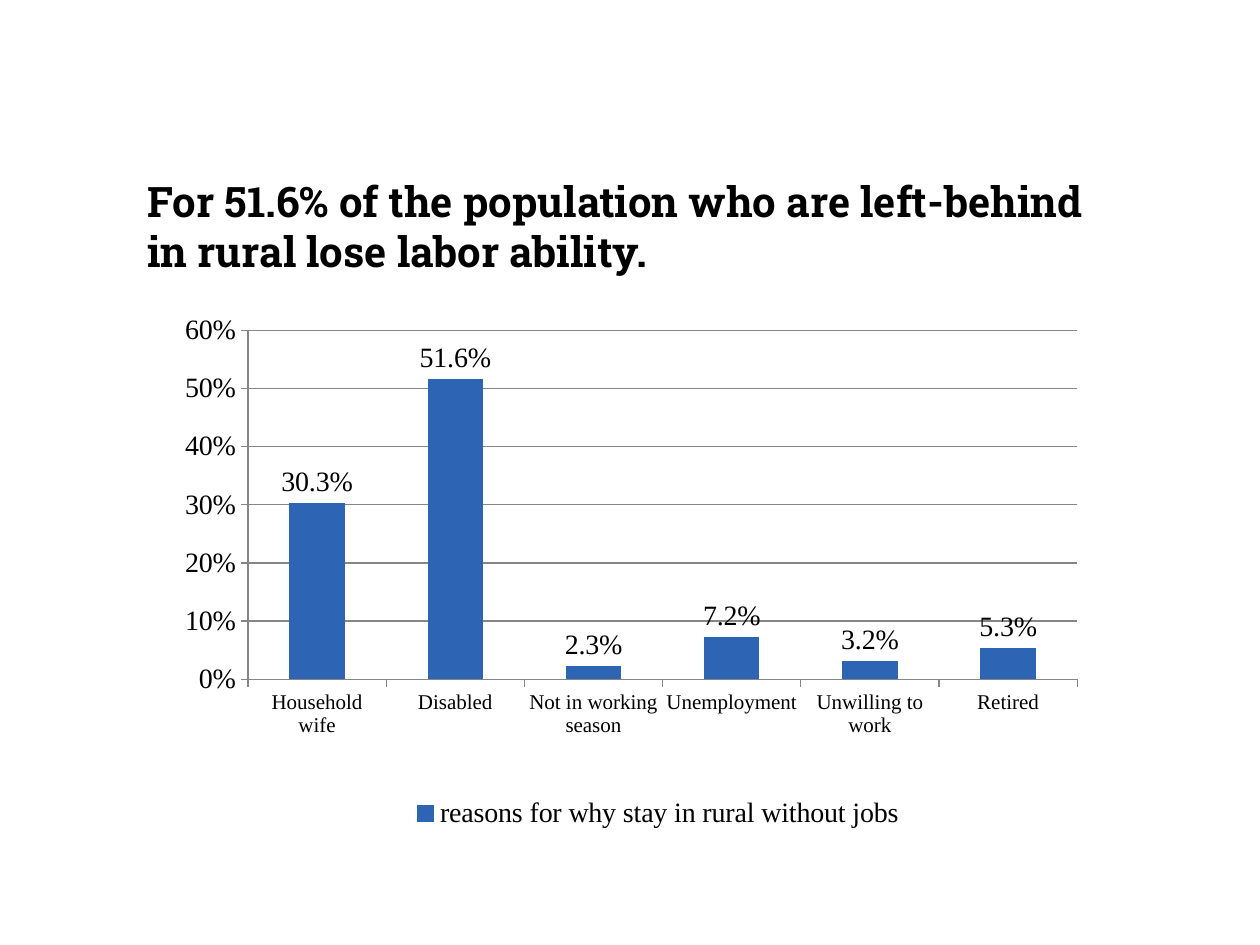
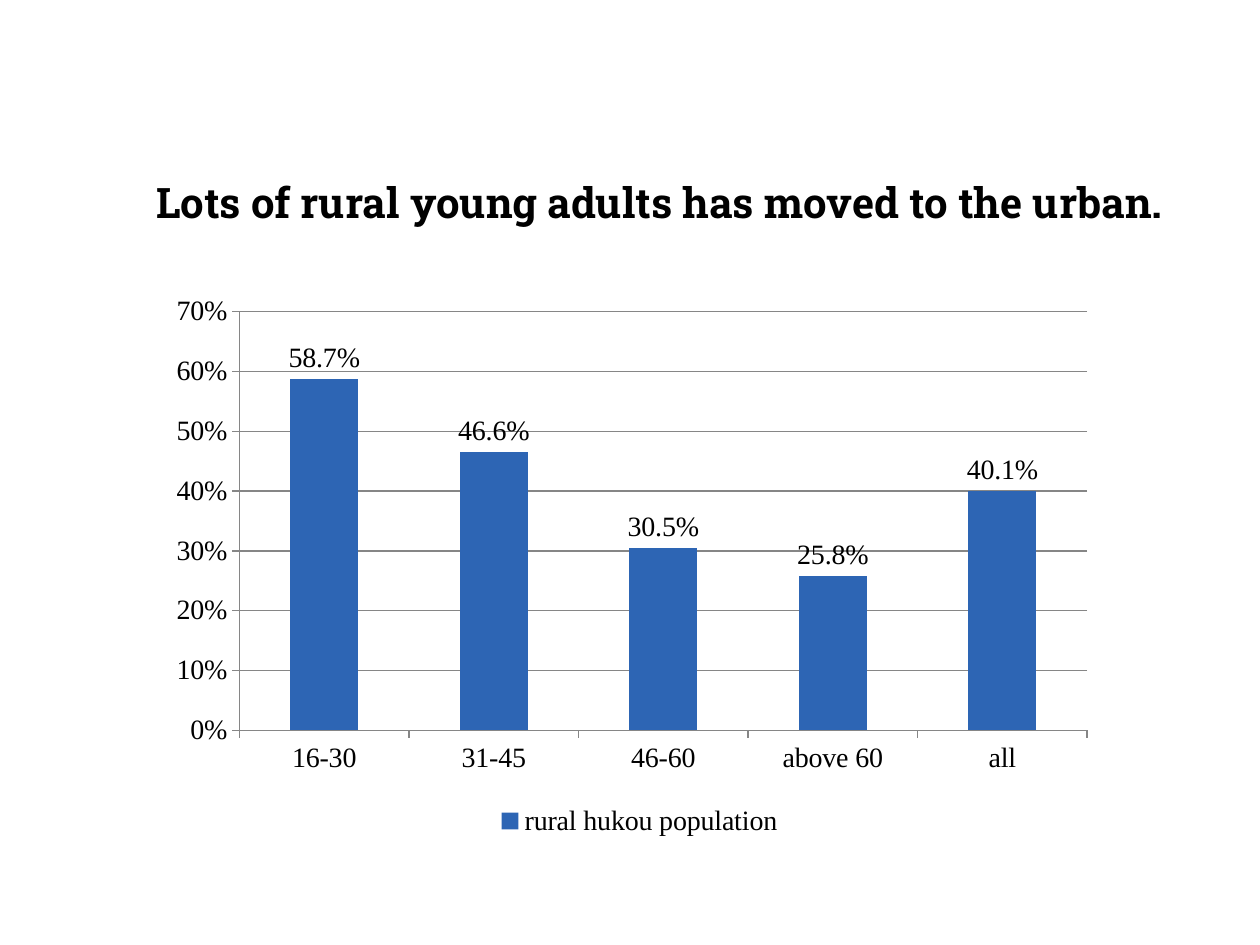
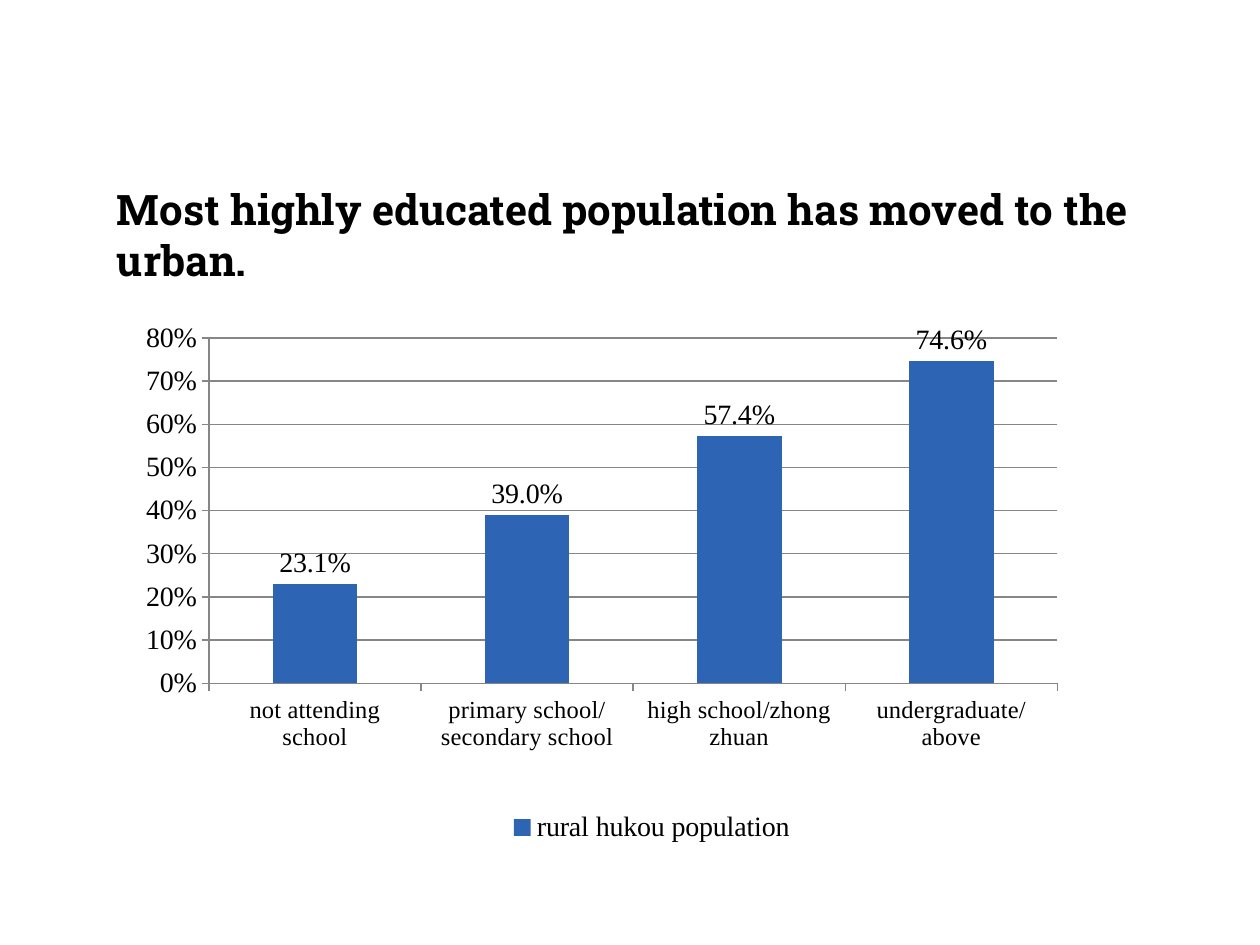
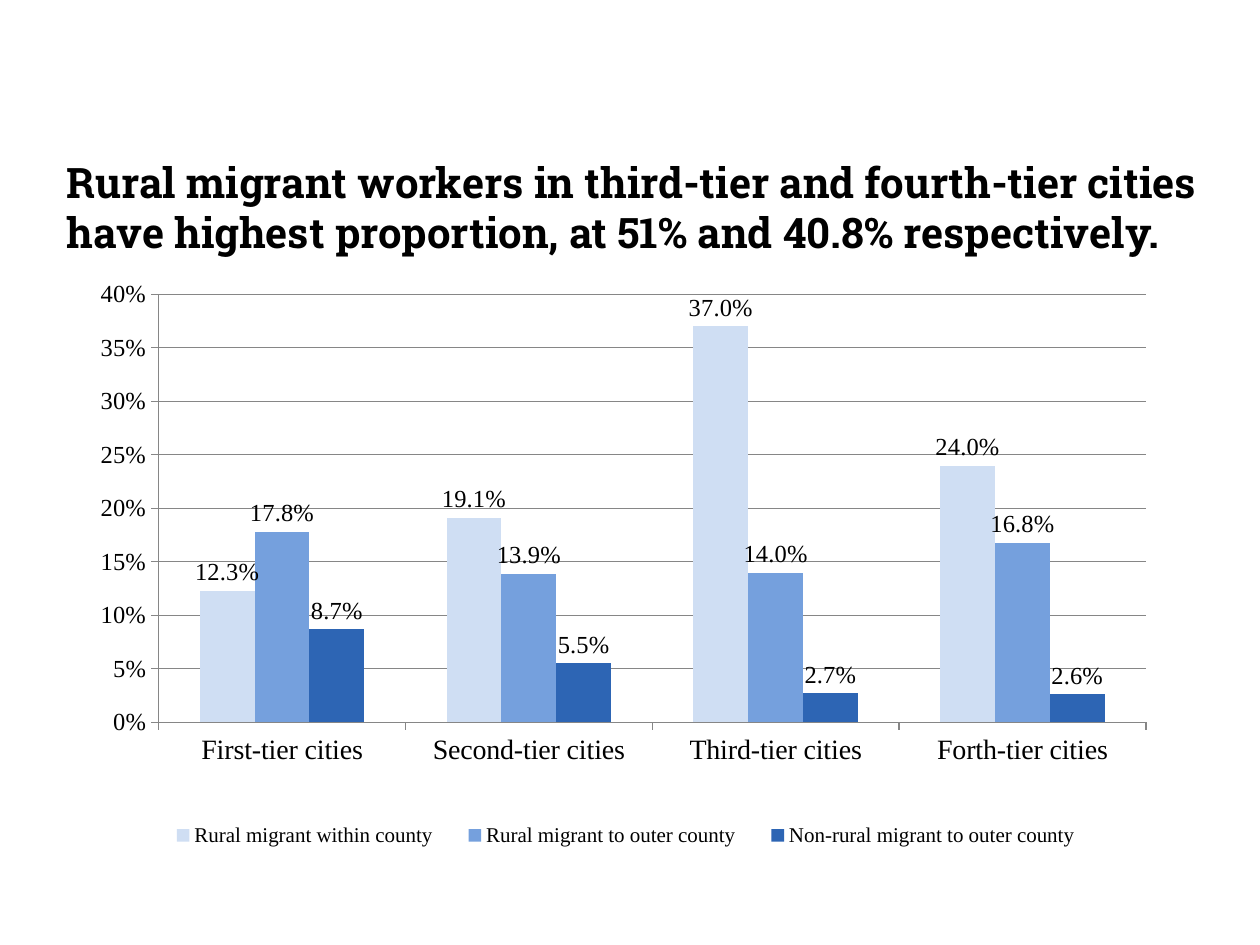
import dataclasses

import pptx
import pptx.chart.data
import pptx.dml.color
import pptx.enum.chart
import pptx.enum.text
import pptx.oxml
import pptx.oxml.ns
import pptx.util
from pptx.util import Inches


@dataclasses.dataclass(frozen=True)
class Theme:
    background: str = "FFFFFF"
    ink: str = "000000"
    rule: str = "868686"
    blue: str = "2D65B4"
    mid_blue: str = "75A0DD"
    pale_blue: str = "CFDEF3"
    title_font: str = "Roboto Slab"
    chart_font: str = "Times New Roman"
    title_size: int = 24
    large: int = 16
    medium: int = 14
    small: int = 12


THEME = Theme()


def rgb(value):
    return pptx.dml.color.RGBColor.from_string(value)


def style_font(font, size, name=THEME.chart_font, color=THEME.ink, bold=False):
    font.size = pptx.util.Pt(size)
    font.name = name
    font.bold = bold
    font.color.rgb = rgb(color)


def write_text(frame, text, **font_format):
    """Write one paragraph per line of text, all in the same format."""
    for index, line in enumerate(text.split("\n")):
        paragraph = frame.add_paragraph() if index else frame.paragraphs[0]
        run = paragraph.add_run()
        run.text = line
        style_font(run.font, **font_format)


def set_layout(parent, index, x, y, w, h, inner=False):
    """Place a chart part by fractions of the chart area."""
    for old in parent.findall(pptx.oxml.ns.qn("c:layout")):
        parent.remove(old)
    target = '<c:layoutTarget val="inner"/>' if inner else ""
    modes = "".join(f'<c:{axis}Mode val="edge"/>' for axis in "xy")
    sizes = "".join(f'<c:{key} val="{value}"/>'
                    for key, value in zip("xywh", (x, y, w, h)))
    parent.insert(index, pptx.oxml.parse_xml(
        f'<c:layout {pptx.oxml.ns.nsdecls("c")}><c:manualLayout>'
        f'{target}{modes}{sizes}</c:manualLayout></c:layout>'))


class Deck:
    def __init__(self, theme):
        self.theme = theme
        self.show = pptx.Presentation()
        self.show.slide_width, self.show.slide_height = Inches(10), Inches(7.5)
        self.slide = None

    def new_slide(self):
        self.slide = self.show.slides.add_slide(self.show.slide_layouts[6])
        fill = self.slide.background.fill
        fill.solid()
        fill.fore_color.rgb = rgb(self.theme.background)

    def title(self, text, box, wrap=True):
        frame = self.slide.shapes.add_textbox(*map(Inches, box)).text_frame
        frame.word_wrap = wrap
        frame.auto_size = pptx.enum.text.MSO_AUTO_SIZE.SHAPE_TO_FIT_TEXT
        write_text(frame, text, size=self.theme.title_size,
                   name=self.theme.title_font, bold=True)

    def column_chart(self, box, categories, series, top, plot_area, legend_area,
                     step=0.1, category_size=THEME.large, value_size=THEME.large,
                     legend_size=THEME.large):
        # Data: series holds (name, colour, values)
        data = pptx.chart.data.CategoryChartData(number_format="0.0%")
        data.categories = categories
        for name, _, values in series:
            data.add_series(name, values)
        chart = self.slide.shapes.add_chart(
            pptx.enum.chart.XL_CHART_TYPE.COLUMN_CLUSTERED,
            *map(Inches, box), data).chart
        chart.has_title = False
        style_font(chart.font, value_size)

        # Columns and their labels
        plot = chart.plots[0]
        plot.gap_width, plot.overlap = 150, 0
        plot.vary_by_categories = False
        for column, (_, color, _) in zip(plot.series, series):
            column.format.fill.solid()
            column.format.fill.fore_color.rgb = rgb(color)
        plot.has_data_labels = True
        labels = plot.data_labels
        labels.show_value = True
        labels.number_format, labels.number_format_is_linked = "0.0%", False
        labels.position = pptx.enum.chart.XL_LABEL_POSITION.OUTSIDE_END
        style_font(labels.font, value_size)

        # Axes
        values = chart.value_axis
        values.minimum_scale, values.maximum_scale = 0, top
        values.major_unit = step
        values.has_major_gridlines = True
        values.tick_labels.number_format = "0%"
        values.tick_labels.number_format_is_linked = False
        for axis, size in ((chart.category_axis, category_size),
                           (values, value_size)):
            axis.major_tick_mark = pptx.enum.chart.XL_TICK_MARK.OUTSIDE
            style_font(axis.tick_labels.font, size)
        for line in (chart.category_axis.format.line, values.format.line,
                     values.major_gridlines.format.line):
            line.color.rgb = rgb(self.theme.rule)
            line.width = pptx.util.Pt(0.75)

        # Legend and placement
        chart.has_legend = True
        chart.legend.position = pptx.enum.chart.XL_LEGEND_POSITION.BOTTOM
        chart.legend.include_in_layout = False
        style_font(chart.legend.font, legend_size)
        drawing = chart.element.chart
        set_layout(drawing.find(pptx.oxml.ns.qn("c:plotArea")), 0,
                   *plot_area, inner=True)
        set_layout(drawing.find(pptx.oxml.ns.qn("c:legend")), 1, *legend_area)


def main():
    deck = Deck(THEME)

    # Reasons for staying
    deck.new_slide()
    deck.title("For 51.6% of the population who are left-behind\n"
               "in rural lose labor ability.", (1.07, 1.34, 8.02, 0.91), wrap=False)
    deck.column_chart(
        (1.22, 2.41, 7.48, 4.26),
        ["Household wife", "Disabled", "Not in working season",
         "Unemployment", "Unwilling to work", "Retired"],
        [("reasons for why stay in rural without jobs", THEME.blue,
          (0.303, 0.516, 0.023, 0.072, 0.032, 0.053))],
        top=0.6, plot_area=(0.1, 0.05, 0.88, 0.65),
        legend_area=(0.26, 0.91, 0.55, 0.08), category_size=THEME.small)

    # Movement by age
    deck.new_slide()
    deck.title("Lots of rural young adults has moved to the urban.",
               (1.14, 1.35, 8.47, 0.5), wrap=False)
    deck.column_chart(
        (1.22, 2.25, 7.56, 4.49),
        ["16-30", "31-45", "46-60", "above 60", "all"],
        [("rural hukou population", THEME.blue,
          (0.587, 0.466, 0.305, 0.258, 0.401))],
        top=0.7, plot_area=(0.09, 0.05, 0.89, 0.74),
        legend_area=(0.34, 0.91, 0.34, 0.08))

    # Movement by education
    deck.new_slide()
    deck.title("Most highly educated population has moved to the urban.",
               (0.83, 1.41, 8.86, 0.91))
    deck.column_chart(
        (1.14, 2.18, 7.4, 4.57),
        ["not attending school", "primary school/secondary school",
         "high school/zhong zhuan", "undergraduate/above"],
        [("rural hukou population", THEME.blue, (0.231, 0.39, 0.574, 0.746))],
        top=0.8, plot_area=(0.07, 0.11, 0.91, 0.6),
        legend_area=(0.37, 0.92, 0.35, 0.08), category_size=THEME.medium)

    # Migrants by city tier
    deck.new_slide()
    deck.title("Rural migrant workers in third-tier and fourth-tier cities\n"
               "have highest proportion, at 51% and 40.8% respectively.",
               (0.43, 1.19, 9.93, 0.91))
    deck.column_chart(
        (0.67, 2.1, 8.43, 4.72),
        [f"{tier}-tier cities" for tier in ("First", "Second", "Third", "Forth")],
        [("Rural migrant within county", THEME.pale_blue,
          (0.123, 0.191, 0.37, 0.24)),
         ("Rural migrant to outer county", THEME.mid_blue,
          (0.178, 0.139, 0.14, 0.168)),
         ("Non-rural migrant to outer county", THEME.blue,
          (0.087, 0.055, 0.027, 0.026))],
        top=0.4, step=0.05, plot_area=(0.07, 0.05, 0.93, 0.72),
        legend_area=(0.06, 0.92, 0.9, 0.08),
        value_size=THEME.medium, legend_size=THEME.small)

    deck.show.save("out.pptx")


if __name__ == "__main__":
    main()
